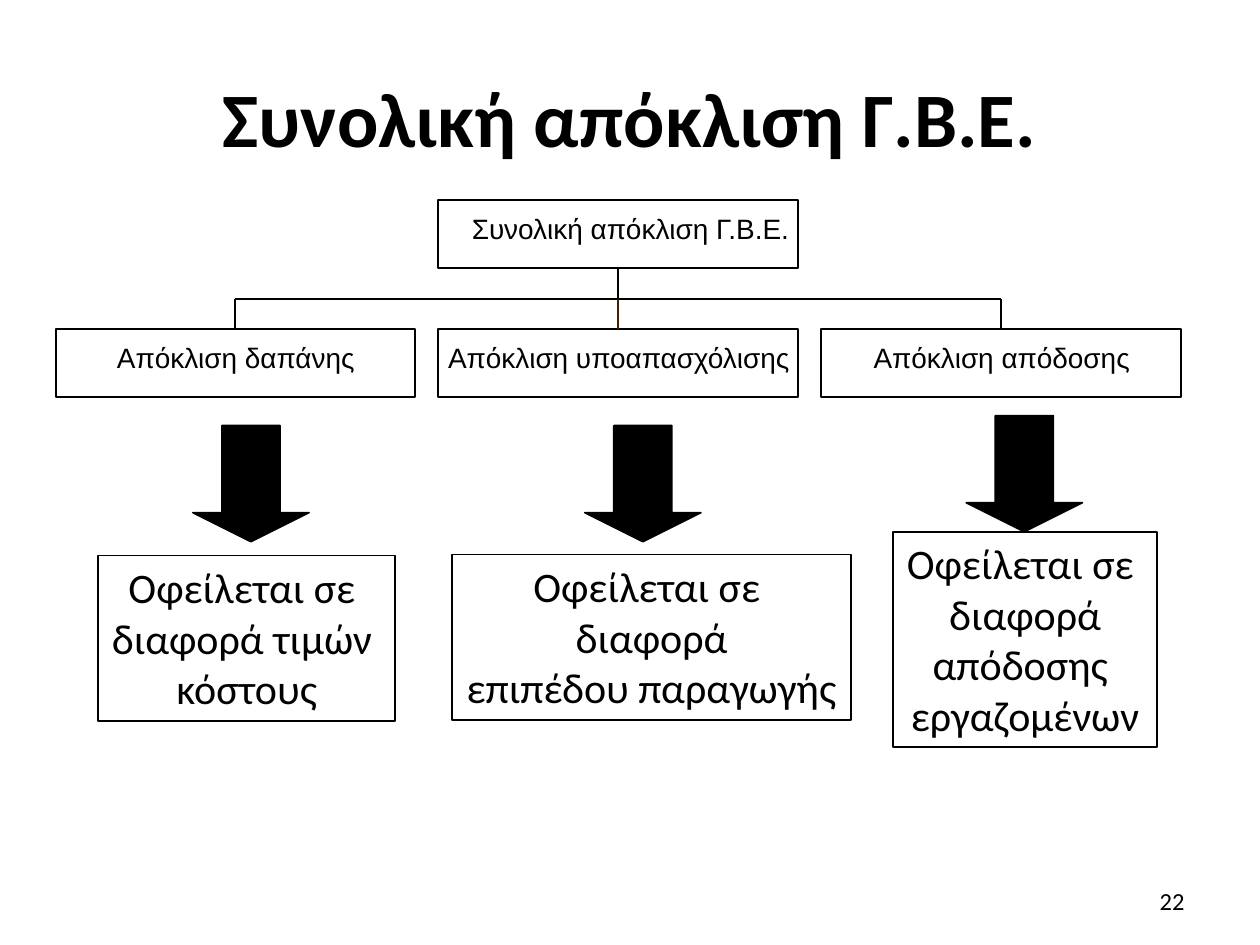
from lxml.etree import SubElement
from pptx import Presentation
from pptx.dml.color import RGBColor
from pptx.enum.shapes import MSO_CONNECTOR, MSO_SHAPE
from pptx.enum.text import MSO_ANCHOR as Anchor, MSO_AUTO_SIZE as AutoSize, PP_ALIGN as Align
from pptx.oxml.ns import qn
from pptx.util import Cm, Pt

BLACK = RGBColor(0x00, 0x00, 0x00)
BROWN = RGBColor(0x40, 0x20, 0x00)

TITLE = "Συνολική απόκλιση Γ.Β.Ε."
ROOT = "Συνολική απόκλιση Γ.Β.Ε."
PAGE_NUMBER = "22"
BRANCHES = [
    {"label": "Απόκλιση δαπάνης", "drop_color": BLACK,
     "arrow": (3.89, 8.58), "cause_box": (1.98, 11.2, 5.99, 3.33),
     "cause": ["Οφείλεται σε ", "διαφορά τιμών ", "κόστους"]},
    {"label": "Απόκλιση υποαπασχόλισης", "drop_color": BROWN,
     "arrow": (11.79, 8.58), "cause_box": (9.12, 11.18, 8.03, 3.33),
     "cause": ["Οφείλεται σε ", "διαφορά", "επιπέδου παραγωγής"]},
    {"label": "Απόκλιση απόδοσης", "drop_color": BLACK,
     "arrow": (19.48, 8.38), "cause_box": (18.01, 10.72, 5.31, 4.34),
     "cause": ["Οφείλεται σε ", "διαφορά", "απόδοσης ", "εργαζομένων"]},
]

NODE_WIDTH, NODE_HEIGHT = 7.24, 1.37
NODE_LEFT, NODE_PITCH = 1.12, 7.72
ROOT_TOP, BRANCH_TOP = 4.04, 6.63
BUS_Y = (ROOT_TOP + NODE_HEIGHT + BRANCH_TOP) / 2
ARROW_SIZE = 2.34
TREE_LINE, BOX_LINE = 1.13, 1


def write(shape, lines, font, size, align=Align.CENTER, anchor=Anchor.TOP, bold=False):
    """Put formatted lines of text into a shape."""
    frame = shape.text_frame
    frame.text = "\n".join(lines)
    frame.vertical_anchor = anchor
    for paragraph in frame.paragraphs:
        paragraph.alignment = align
        for run in paragraph.runs:
            run.font.name, run.font.size, run.font.bold = font, Pt(size), bold
            run.font.color.rgb = BLACK
    return frame


def add_box(slide, kind, box, line_width, filled=False):
    """Add a black-outlined shape."""
    shape = slide.shapes.add_shape(kind, *map(Cm, box))
    shape.shadow.inherit = False
    if filled:
        shape.fill.solid()
        shape.fill.fore_color.rgb = BLACK
    else:
        shape.fill.background()
    shape.line.color.rgb = BLACK
    shape.line.width = Pt(line_width)
    return shape


def add_node(slide, text, left, top, left_inset=0.03):
    """Add a labelled box of the tree."""
    node = add_box(slide, MSO_SHAPE.RECTANGLE, (left, top, NODE_WIDTH, NODE_HEIGHT), TREE_LINE)
    frame = write(node, [text], "Arial", 16)
    frame.word_wrap = False
    frame.margin_left, frame.margin_top = Cm(left_inset), Cm(0.23)
    frame.margin_right = frame.margin_bottom = 0
    return node


def add_line(slide, start, end, color=BLACK):
    """Add a straight line of the tree."""
    line = slide.shapes.add_connector(MSO_CONNECTOR.STRAIGHT, *map(Cm, start + end))
    line.line.color.rgb = color
    line.line.width = Pt(TREE_LINE)
    SubElement(line._element.spPr, qn("a:effectLst"))
    return line


def main():
    """Build the slide and save it."""
    presentation = Presentation()
    presentation.slide_width, presentation.slide_height = Cm(25.4), Cm(19.05)
    slide = presentation.slides.add_slide(presentation.slide_layouts[5])

    title = slide.shapes.title
    title.left, title.top, title.width, title.height = map(Cm, (1.27, 0.76, 22.86, 3.18))
    write(title, [TITLE], "Calibri", 44, anchor=Anchor.MIDDLE, bold=True)

    number = slide.shapes.add_textbox(*map(Cm, (18.21, 17.65, 5.92, 1.02)))
    write(number, [PAGE_NUMBER], "Calibri", 14, Align.RIGHT, Anchor.MIDDLE).word_wrap = True

    lefts = [NODE_LEFT + i * NODE_PITCH for i in range(len(BRANCHES))]
    centers = [left + NODE_WIDTH / 2 for left in lefts]
    root = add_node(slide, ROOT, lefts[1], ROOT_TOP, left_inset=0.5)
    stem = add_line(slide, (centers[1], ROOT_TOP + NODE_HEIGHT), (centers[1], BUS_Y))
    stem.begin_connect(root, 2)
    add_line(slide, (centers[0], BUS_Y), (centers[-1], BUS_Y))

    for branch, left, center in zip(BRANCHES, lefts, centers):
        node = add_node(slide, branch["label"], left, BRANCH_TOP)
        drop = add_line(slide, (center, BUS_Y), (center, BRANCH_TOP), branch["drop_color"])
        drop.end_connect(node, 0)

        arrow_box = (*branch["arrow"], ARROW_SIZE, ARROW_SIZE)
        arrow = add_box(slide, MSO_SHAPE.DOWN_ARROW, arrow_box, BOX_LINE, filled=True)
        arrow.adjustments[0], arrow.adjustments[1] = 0.5, 0.25

        cause = add_box(slide, MSO_SHAPE.RECTANGLE, branch["cause_box"], BOX_LINE)
        frame = write(cause, branch["cause"], "Calibri", 24)
        frame.word_wrap = False
        frame.auto_size = AutoSize.SHAPE_TO_FIT_TEXT

    presentation.save("out.pptx")


if __name__ == "__main__":
    main()
